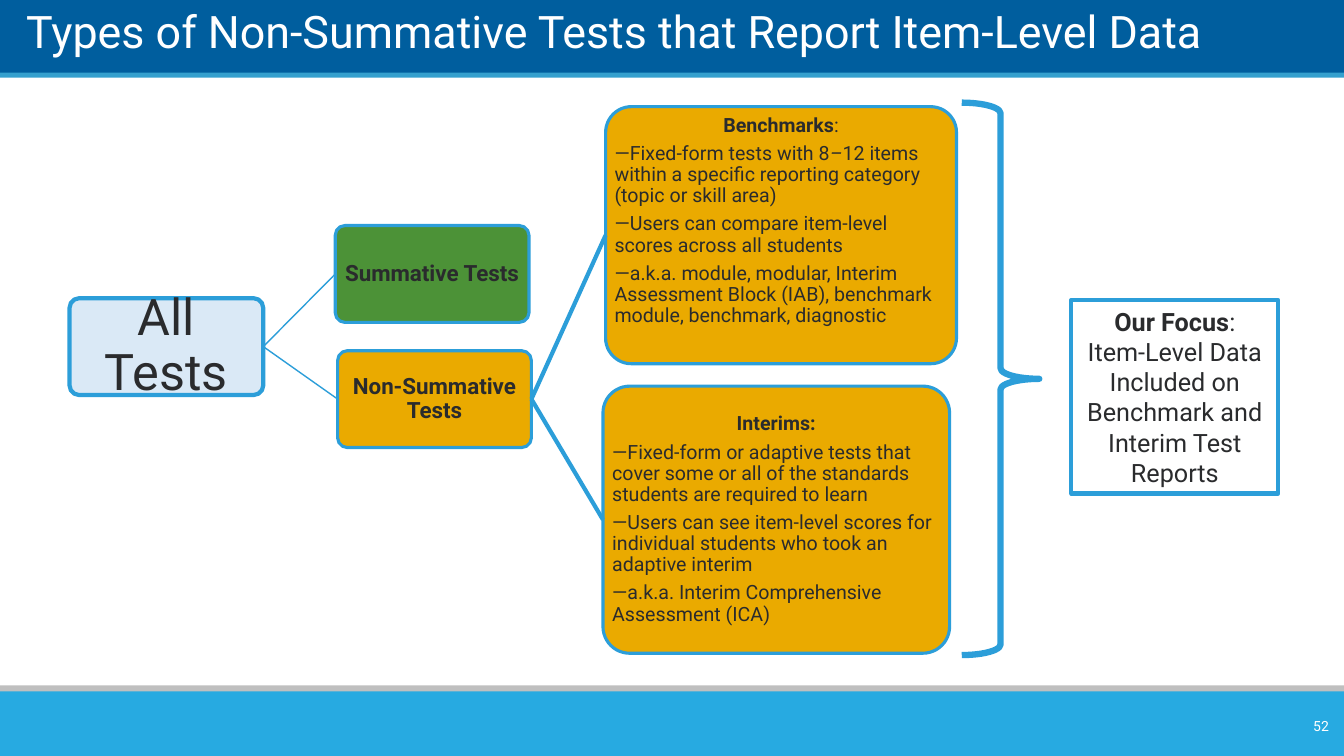
from pptx import Presentation
from pptx import util as u
from pptx.dml import color
from pptx.enum import shapes, text
from pptx.oxml import ns

SHAPE = shapes.MSO_SHAPE
LEFT, CENTER, RIGHT = text.PP_ALIGN.LEFT, text.PP_ALIGN.CENTER, text.PP_ALIGN.RIGHT
MIDDLE, BOTTOM = text.MSO_ANCHOR.MIDDLE, text.MSO_ANCHOR.BOTTOM


def rgb(hex_code):
    return color.RGBColor.from_string(hex_code)


def apply(target, formats):
    for name, value in formats.items():
        setattr(target, name, value)


class Deck:
    FONT = "Roboto"
    INK, WHITE, OUTLINE = "2A2B2D", "FFFFFF", "2C9ED9"

    def __init__(self, width, height):
        self.prs = Presentation()
        apply(self.prs, {"slide_width": u.Pt(width), "slide_height": u.Pt(height)})
        self.slide = self.prs.slides.add_slide(self.prs.slide_layouts[5])

    def fill_text(self, frame, paragraphs, size, ink=INK, anchor=MIDDLE,
                  insets=(0, 0, 0, 0), spacing=1.0, after=0):
        """Each paragraph is (alignment, [(text, font formats), ...])."""
        left, top, right, bottom = map(u.Pt, insets)
        apply(frame, {"word_wrap": True, "auto_size": text.MSO_AUTO_SIZE.NONE,
                      "vertical_anchor": anchor, "margin_left": left,
                      "margin_top": top, "margin_right": right,
                      "margin_bottom": bottom})
        for number, (align, runs) in enumerate(paragraphs):
            para = frame.paragraphs[0] if number == 0 else frame.add_paragraph()
            apply(para, {"alignment": align, "line_spacing": spacing,
                         "space_before": u.Pt(0), "space_after": u.Pt(after)})
            for words, formats in runs:
                run = para.add_run()
                run.text = words
                apply(run.font, {"name": self.FONT, "size": u.Pt(size), **formats})
                run.font.color.rgb = rgb(ink)

    def title(self, words, box, size):
        heading = self.slide.shapes.title
        apply(heading, dict(zip(("left", "top", "width", "height"), map(u.Pt, box))))
        self.fill_text(heading.text_frame, [(LEFT, [(words, {})])], size,
                       ink=self.WHITE, anchor=BOTTOM)
        # Bring the heading in front of the bands
        heading._element.getparent().append(heading._element)

    def label(self, words, box, size):
        frame = self.slide.shapes.add_textbox(*map(u.Pt, box)).text_frame
        self.fill_text(frame, [(RIGHT, [(words, {})])], size, ink=self.WHITE,
                       insets=(7.2, 3.6, 7.2, 3.6))

    def shape(self, kind, box, fill=None, line=0, adjustments=()):
        item = self.slide.shapes.add_shape(kind, *map(u.Pt, box))
        item.shadow.inherit = False
        if fill:
            item.fill.solid()
            item.fill.fore_color.rgb = rgb(fill)
        else:
            item.fill.background()
        if line:
            item.line.color.rgb = rgb(self.OUTLINE)
            item.line.width = u.Pt(line)
        else:
            item.line.fill.background()
        for index, value in enumerate(adjustments):
            item.adjustments[index] = value
        return item

    def node(self, box, fill, paragraphs, size, line=2.25, insets=(1, 1, 1, 1)):
        item = self.shape(SHAPE.ROUNDED_RECTANGLE, box, fill, line, [0.1])
        self.fill_text(item.text_frame, paragraphs, size, insets=insets,
                       spacing=0.9, after=0.35 * size)
        return item

    def branch(self, parent, child, width):
        """Line from the right side of parent to the left side of child."""
        link = self.slide.shapes.add_connector(shapes.MSO_CONNECTOR.STRAIGHT, 0, 0, 0, 0)
        link.begin_connect(parent, 3)
        link.end_connect(child, 1)
        link.line.color.rgb = rgb(self.OUTLINE)
        link.line.width = u.Pt(width)
        properties = link._element.spPr
        properties.append(properties.makeelement(ns.qn("a:effectLst"), {}))


def test_type(heading, points):
    return [(CENTER, heading)] + [(LEFT, runs) for runs in points]


def main():
    bold, italic = {"bold": True}, {"italic": True}
    deck = Deck(960, 540)

    # Header and footer bands
    for top, height, fill in ((0, 53.3, "005E9E"), (51.8, 3.6, "35A0CE"),
                              (489.6, 10, "BFBFBF"), (493.9, 46.1, "27AAE1")):
        deck.shape(SHAPE.RECTANGLE, (0, top, 960, height), fill)
    deck.title("Types of Non-Summative Tests that Report Item-Level Data",
               (18.7, 0, 867.6, 41), 32)

    # Test hierarchy
    node_size = (138.4, 69.2)
    amber = "EAAA00"
    all_tests = deck.node((49.7, 213, *node_size), "DAE9F6",
                          [(CENTER, [("All Tests", {})])], 36, 3, (2, 2, 2, 2))
    summative = deck.node((239.5, 161.1, *node_size), "4C9237",
                          [(CENTER, [("Summative Tests", bold)])], 16)
    non_summative = deck.node((241.2, 250.5, *node_size), amber,
                              [(CENTER, [("Non-Summative Tests", bold)])], 16)

    # Kinds of non-summative tests
    benchmarks = deck.node((432.6, 76.2, 250.6, 183.6), amber, test_type(
        [("Benchmarks", bold), (":", {})],
        [[("—Fixed-form tests with 8", {}), ("–", italic),
          ("12 items within a specific reporting category (topic or skill area)", {})],
         [("—Users can compare item-level scores across all students", {})],
         [("—a.k.a. module, modular, Interim Assessment Block (IAB), "
           "benchmark module, benchmark, diagnostic", {})]],
    ), 14, insets=(1, 1, 1, 21))
    interims = deck.node((430.7, 275.8, 247.6, 190.8), amber, test_type(
        [("Interims:", bold)],
        [[("—Fixed-form or adaptive tests that cover some or all of the "
           "standards students are required to learn", {})],
         [("—Users can see item-level scores for individual students "
           "who took an adaptive interim", {})],
         [("—a.k.a. Interim Comprehensive Assessment (ICA)", {})]],
    ), 14)

    # Branches
    for parent, child, width in ((all_tests, summative, 1),
                                 (all_tests, non_summative, 1),
                                 (non_summative, benchmarks, 3),
                                 (non_summative, interims, 3)):
        deck.branch(parent, child, width)

    # Brace and focus
    deck.shape(SHAPE.RIGHT_BRACE, (687, 73.3, 55.4, 394.6), line=4.5,
               adjustments=[0.137, 0.5])
    focus = deck.shape(SHAPE.RECTANGLE, (765.3, 214.3, 147.8, 138.2), line=3)
    deck.fill_text(focus.text_frame, [
        (CENTER, [("Our Focus", bold), (":", {})]),
        (CENTER, [("Item-Level Data Included on Benchmark and Interim Test Reports", {})]),
    ], 18, insets=(7.2, 3.6, 7.2, 3.6))

    # Slide number
    deck.label("52", (900.7, 507.8, 55.6, 21.6), 10)

    deck.prs.save("out.pptx")


if __name__ == "__main__":
    main()
